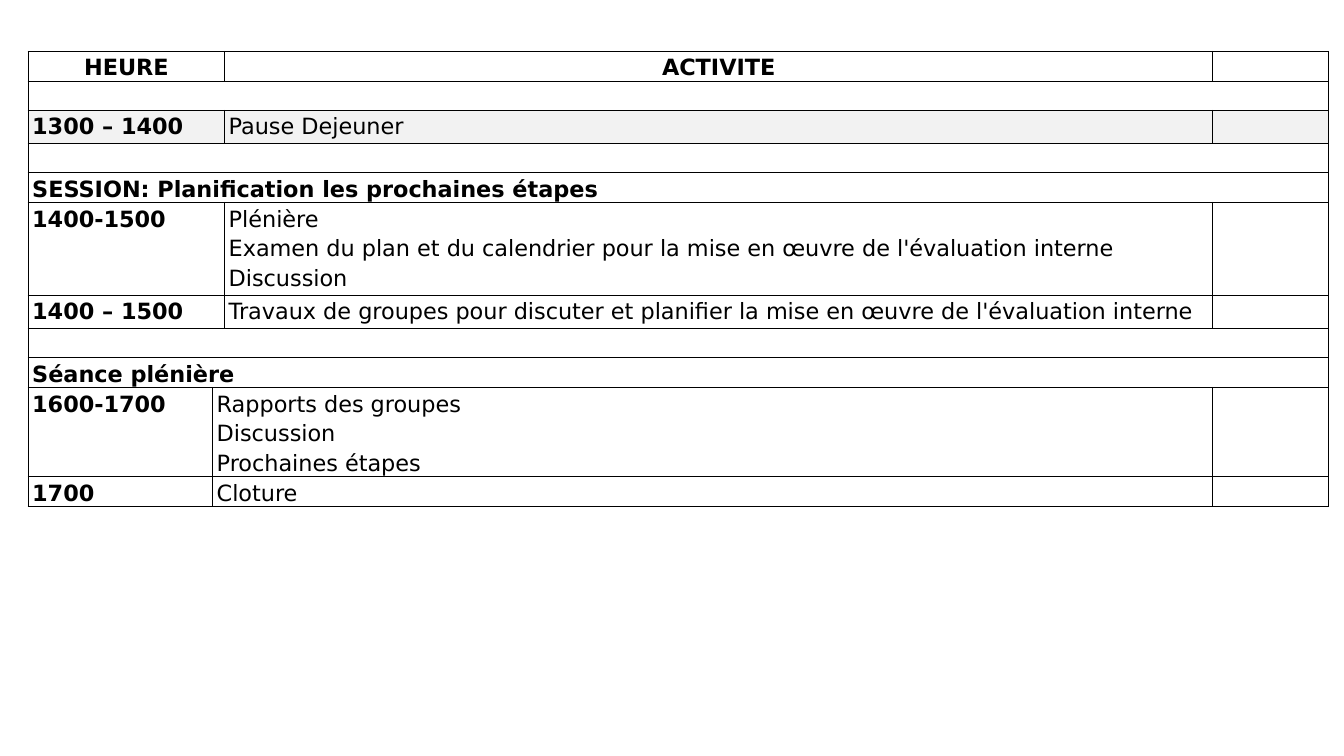
import pptx
import pptx.dml.color
import pptx.enum.text
import pptx.oxml
import pptx.oxml.ns
import pptx.util
from dataclasses import dataclass
from lxml import etree


@dataclass(frozen=True)
class Theme:
    font: str = "DejaVu Sans"
    size: int = 16
    line_spacing: float = 1.15
    text: str = "000000"
    border: str = "000000"
    break_fill: str = "F2F2F2"
    border_width: int = 1


theme = Theme()
inches = pptx.util.Inches
color = pptx.dml.color.RGBColor.from_string
align = pptx.enum.text.PP_ALIGN


def write_cell(cell, text, bold=False, alignment=align.LEFT):
    """Write one paragraph per line; an empty cell keeps the type size."""
    cell.margin_left = cell.margin_right = inches(0.04)
    cell.margin_top = cell.margin_bottom = 0
    cell.text_frame.text = text
    for paragraph in cell.text_frame.paragraphs:
        paragraph.line_spacing = theme.line_spacing
        paragraph.alignment = alignment
        for run in paragraph.runs:
            run.font.name = theme.font
            run.font.size = pptx.util.Pt(theme.size)
            run.font.bold = bold
            run.font.color.rgb = color(theme.text)
        if not text:
            end = etree.SubElement(paragraph._p, pptx.oxml.ns.qn("a:endParaRPr"), sz=str(theme.size * 100))
            etree.SubElement(end, pptx.oxml.ns.qn("a:latin"), typeface=theme.font)


def frame_cell(cell, fill=None):
    properties = cell._tc.get_or_add_tcPr()
    for side in ("lnL", "lnR", "lnT", "lnB"):
        line = etree.SubElement(properties, pptx.oxml.ns.qn(f"a:{side}"),
                                w=str(pptx.util.Pt(theme.border_width)))
        solid = etree.SubElement(line, pptx.oxml.ns.qn("a:solidFill"))
        etree.SubElement(solid, pptx.oxml.ns.qn("a:srgbClr"), val=theme.border)
    if fill:
        cell.fill.solid()
        cell.fill.fore_color.rgb = color(fill)
    else:
        cell.fill.background()


# Each row: height, column where the activity starts (None = full width), time or heading, activity
line_height = 0.29
column_widths = (1.83, 0.1, 9.8, 1.15)
last_column = len(column_widths) - 1
agenda = [
    (line_height, 2, "HEURE", "ACTIVITE"),
    (line_height, None, "", ""),
    (0.33, 2, "1300 – 1400", "Pause Dejeuner"),
    (line_height, None, "", ""),
    (line_height, None, "SESSION: Planification les prochaines étapes", ""),
    (0.92, 2, "1400-1500",
     "Plénière\nExamen du plan et du calendrier pour la mise en œuvre de l'évaluation interne\nDiscussion"),
    (0.33, 2, "1400 – 1500",
     "Travaux de groupes pour discuter et planifier la mise en œuvre de l'évaluation interne"),
    (line_height, None, "", ""),
    (line_height, None, "Séance plénière", ""),
    (3 * line_height, 1, "1600-1700", "Rapports des groupes\nDiscussion\nProchaines étapes"),
    (line_height, 1, "1700", "Cloture"),
]
header_row, break_row = 0, 2

presentation = pptx.Presentation()
presentation.slide_width = inches(13.33)
presentation.slide_height = inches(7.5)
slide = presentation.slides.add_slide(presentation.slide_layouts[6])

table = slide.shapes.add_table(
    len(agenda), len(column_widths), inches(0.28), inches(0.51),
    inches(sum(column_widths)), inches(sum(row[0] for row in agenda))).table
table.first_row = table.horz_banding = False
for column, width in zip(table.columns, column_widths):
    column.width = inches(width)

for index, (height, activity_column, heading, activity) in enumerate(agenda):
    table.rows[index].height = inches(height)
    cells = [table.cell(index, column) for column in range(len(column_widths))]
    for cell in cells:
        write_cell(cell, "")
        frame_cell(cell, theme.break_fill if index == break_row else None)
    is_header = index == header_row
    alignment = align.CENTER if is_header else align.LEFT
    if heading:
        write_cell(cells[0], heading, bold=True, alignment=alignment)
    if activity_column is None:
        cells[0].merge(cells[last_column])
        continue
    write_cell(cells[activity_column], activity, bold=is_header, alignment=alignment)
    if activity_column == 2:
        cells[0].merge(cells[1])
    else:
        cells[1].merge(cells[2])

presentation.save("out.pptx")
